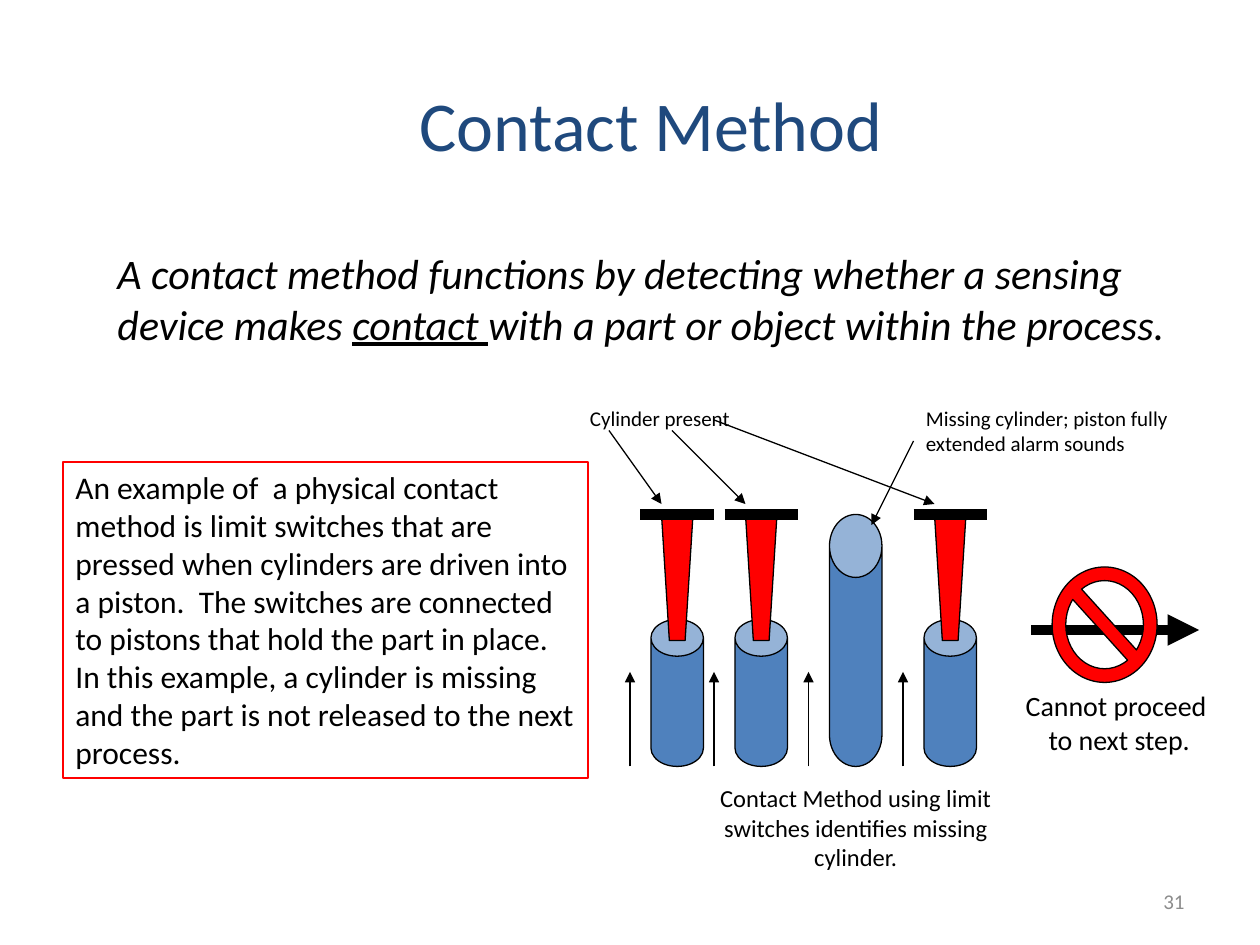
from pptx import Presentation
from pptx.dml.color import RGBColor
from pptx.enum.shapes import MSO_CONNECTOR, MSO_SHAPE
from pptx.enum.text import MSO_ANCHOR, PP_ALIGN
from pptx.oxml.ns import qn
from pptx.util import Inches, Pt
from lxml import etree

STRAIGHT = MSO_CONNECTOR.STRAIGHT
CAN, RECTANGLE, NO_SYMBOL = MSO_SHAPE.CAN, MSO_SHAPE.RECTANGLE, MSO_SHAPE.NO_SYMBOL
LEFT, CENTER, RIGHT = PP_ALIGN.LEFT, PP_ALIGN.CENTER, PP_ALIGN.RIGHT
TOP, MIDDLE = MSO_ANCHOR.TOP, MSO_ANCHOR.MIDDLE

BLACK = RGBColor(0x00, 0x00, 0x00)
RED = RGBColor(0xFF, 0x00, 0x00)
BLUE = RGBColor(0x4F, 0x81, 0xBD)
NAVY = RGBColor(0x1F, 0x49, 0x7D)
GREY = RGBColor(0x8C, 0x8C, 0x8C)

FONT = "Calibri"
COLUMNS, ROWS = 120, 90
THIN, THICK = 0.75, 6


def grid(*cells):
    return [Inches(cell / 12) for cell in cells]


def write(shape, runs, size, color=BLACK, align=LEFT, anchor=TOP, italic=False):
    frame = shape.text_frame
    frame.word_wrap = True
    frame.vertical_anchor = anchor
    paragraph = frame.paragraphs[0]
    paragraph.alignment = align
    for text, underline in runs:
        run = paragraph.add_run()
        run.text = text
        values = {"name": FONT, "size": Pt(size), "italic": italic, "underline": underline}
        for name, value in values.items():
            setattr(run.font, name, value)
        run.font.color.rgb = color


def add_text(slide, box, text, size, **style):
    write(slide.shapes.add_textbox(*grid(*box)), [(text, False)], size, **style)


def paint(shape, fill, line=BLACK):
    shape.shadow.inherit = False
    if fill is None:
        shape.fill.background()
    else:
        shape.fill.solid()
        shape.fill.fore_color.rgb = fill
    shape.line.color.rgb = line
    shape.line.width = Pt(THIN)


def add_line(slide, start, end, width=THIN, arrow=True):
    connector = slide.shapes.add_connector(STRAIGHT, *grid(*start, *end))
    connector.line.color.rgb = BLACK
    connector.line.width = Pt(width)
    if arrow:
        etree.SubElement(connector.line._get_or_add_ln(), qn("a:tailEnd"), type="triangle")
    etree.SubElement(connector._element.spPr, qn("a:effectLst"))


def add_cylinder(slide, box, lid):
    cylinder = slide.shapes.add_shape(CAN, *grid(*box))
    cylinder.adjustments[0] = lid
    paint(cylinder, BLUE)


def add_piston(slide, box):
    left, top, width, height = box
    taper = width / 4
    corners = [
        (left, top),
        (left + taper, top + height),
        (left + width - taper, top + height),
        (left + width, top),
    ]
    start, *others = [grid(*corner) for corner in corners]
    builder = slide.shapes.build_freeform(*start, scale=1.0)
    builder.add_line_segments(others, close=True)
    paint(builder.convert_to_shape(), RED)


def add_station(slide, box, present):
    left, top, width, height = box
    bottom = top + height
    if present:
        add_cylinder(slide, (left, top + 10, width, height - 10), 0.7)
        add_piston(slide, (left + 1, top, width - 2, 12))
        add_line(slide, (left - 1, top), (left + width + 1, top), THICK, arrow=False)
    else:
        add_cylinder(slide, box, 1.2)
    add_line(slide, (left - 2, bottom), (left - 2, bottom - 9))


def add_machine(slide, box):
    left, top, width, height = box
    stations = [(7, True), (15, True), (24, False), (33, True)]
    for offset, present in stations:
        add_station(slide, (left + offset, top + 11, 5, 24), present)

    add_text(slide, (left, top, 22, 3.6), "Cylinder present", 12)
    for start, end in [((3, 3), (8, 10)), ((9, 3), (16, 10)), ((13, 2), (34, 10))]:
        add_line(slide, (left + start[0], top + start[1]), (left + end[0], top + end[1]))

    add_text(slide, (left + 32, top, 30, 6),
             "Missing cylinder; piston fully extended alarm sounds", 12)
    add_line(slide, (left + 32, top + 4), (left + 28, top + 12))
    add_text(slide, (left + 10, top + height - 10, 33, 10),
             "Contact Method using limit switches identifies missing cylinder.", 14, align=CENTER)


def add_stop_sign(slide, box):
    left, top, width, height = box
    add_line(slide, (left + 2, top + 6), (left + 18, top + 6), THICK)
    sign = slide.shapes.add_shape(NO_SYMBOL, *grid(left + 4, top, 10, 11))
    sign.adjustments[0] = 0.13
    paint(sign, RED)
    add_text(slide, (left, top + 11, width, height - 11),
             "Cannot proceed  to next step.", 16, align=CENTER)


def add_heading(slide, box):
    title = slide.shapes.title
    title.left, title.top, title.width, title.height = grid(*box)
    write(title, [("Contact Method", False)], 40, NAVY, CENTER, MIDDLE)


def add_definition(slide, box):
    runs = [
        ("A contact method functions by detecting whether a sensing device makes ", False),
        ("contact ", True),
        ("with a part or object within the process.", False),
    ]
    write(slide.shapes.add_textbox(*grid(*box)), runs, 24, italic=True)


def add_example(slide, box):
    panel = slide.shapes.add_shape(RECTANGLE, *grid(*box))
    paint(panel, None, RED)
    text = (
        "An example of  a physical contact method is limit switches that are pressed "
        "when cylinders are driven into a piston.  The switches are connected to pistons "
        "that hold the part in place.  In this example, a cylinder is missing and the "
        "part is not released to the next process."
    )
    write(panel, [(text, False)], 18)


def main():
    presentation = Presentation()
    presentation.slide_width, presentation.slide_height = grid(COLUMNS, ROWS)
    slide = presentation.slides.add_slide(presentation.slide_layouts.get_by_name("Title Only"))
    add_heading(slide, (11, 4.5, 102, 14.5))
    add_definition(slide, (10, 23, 104, 10.8))
    add_example(slide, (6, 44, 50, 30.1))
    add_machine(slide, (55, 38, 62, 46))
    add_stop_sign(slide, (96.2, 54, 20.8, 18.6))
    add_text(slide, (86, 83.4, 28, 4.8), "31", 12, color=GREY, align=RIGHT, anchor=MIDDLE)
    presentation.save("out.pptx")


if __name__ == "__main__":
    main()
